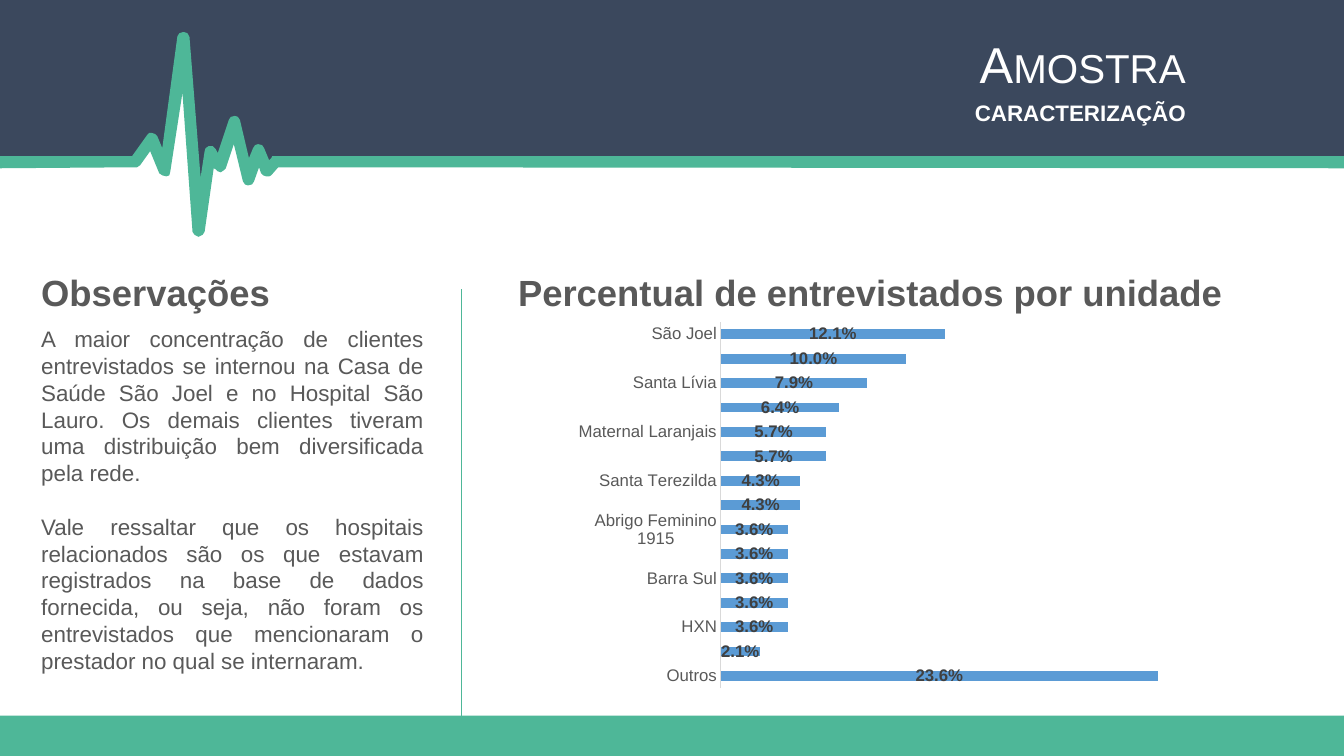
"""Build the sample characterisation slide."""
from lxml import etree
from pptx import Presentation
from pptx import util as u
from pptx.chart.data import CategoryChartData
from pptx.dml.color import RGBColor
from pptx.enum import chart as ec, shapes, text
from pptx.oxml import parse_xml
from pptx.oxml.ns import nsdecls, qn

W, H = 13.33, 7.5
NAVY, GREEN, GREY, WHITE = "3B485D", "4EB798", "595959", "FFFFFF"
BLUE, DARK, PALE = "5B9BD5", "404040", "D9D9D9"

HEADER = [
    (W, 0), (0, 0), (0, 1.61), (1.34, 1.6), (1.52, 1.41), (1.62, 1.67),
    (1.81, 0.74), (1.97, 2.04), (2.08, 1.55), (2.18, 1.65), (2.31, 1.26),
    (2.46, 1.76), (2.58, 1.53), (2.65, 1.69), (2.75, 1.6), (W, 1.61)]
PULSE = [
    (W, 1.55), (2.73, 1.55), (2.7, 1.55), (2.69, 1.57), (2.67, 1.59),
    (2.62, 1.47), (2.6, 1.44), (2.56, 1.43), (2.53, 1.44), (2.51, 1.47),
    (2.47, 1.57), (2.38, 1.19), (2.36, 1.16), (2.33, 1.15), (2.29, 1.16),
    (2.27, 1.19), (2.16, 1.52), (2.14, 1.48), (2.11, 1.45), (2.07, 1.45),
    (2.04, 1.47), (2.03, 1.5), (1.99, 1.76), (1.88, 0.37), (1.86, 0.33),
    (1.83, 0.32), (1.81, 0.32), (1.78, 0.33), (1.76, 0.36), (1.61, 1.47),
    (1.56, 1.35), (1.54, 1.33), (1.51, 1.32), (1.48, 1.32), (1.46, 1.34),
    (1.31, 1.55), (0, 1.55), (0, 1.67), (1.34, 1.66), (1.36, 1.66),
    (1.39, 1.64), (1.49, 1.5), (1.58, 1.72), (1.61, 1.74), (1.65, 1.75),
    (1.68, 1.74), (1.69, 1.7), (1.81, 0.92), (1.91, 2.3), (1.93, 2.33),
    (1.97, 2.35), (2.01, 2.33), (2.03, 2.3), (2.12, 1.67), (2.14, 1.68),
    (2.16, 1.7), (2.19, 1.71), (2.22, 1.69), (2.24, 1.67), (2.32, 1.43),
    (2.41, 1.8), (2.43, 1.83), (2.46, 1.84), (2.5, 1.83), (2.52, 1.8),
    (2.57, 1.66), (2.59, 1.72), (2.61, 1.74), (2.64, 1.75), (2.67, 1.75),
    (2.69, 1.74), (2.76, 1.66), (W, 1.67)]
NOTES = [
    "A maior concentração de clientes entrevistados se internou na Casa de "
    "Saúde São Joel e no Hospital São Lauro. Os demais clientes tiveram uma "
    "distribuição bem diversificada pela rede.",
    "Vale ressaltar que os hospitais relacionados são os que estavam "
    "registrados na base de dados fornecida, ou seja, não foram os "
    "entrevistados que mencionaram o prestador no qual se internaram."]
UNITS = [
    ("São Joel", 0.121), ("São Lauro", 0.1), ("Santa Lívia", 0.079),
    ("São Valério do Sul", 0.064), ("Maternal Laranjais", 0.057),
    ("Costa Sul", 0.057), ("Santa Terezilda", 0.043),
    ("Hospital Itaperi", 0.043), ("Abrigo Feminino 1915", 0.036),
    ("Day Hospital", 0.036), ("Barra Sul", 0.036), ("Rio Sol", 0.036),
    ("HXN", 0.036), ("Dr Balduíno", 0.021), ("Outros", 0.236)]
LEFT, HEAD, BODY, FOOT = 0.31, 2.63, 3.18, 7.1


def rgb(code):
    """Turn a hex string into a colour."""
    return RGBColor.from_string(code)


def style(font, size, color, bold=False):
    """Set size, colour and weight of a font."""
    font.name, font.size, font.bold = "Arial", u.Pt(size), bold
    font.color.rgb = rgb(color)


def paint(shape, color):
    """Give a shape a plain fill."""
    shape.shadow.inherit = False
    shape.fill.solid()
    shape.fill.fore_color.rgb = rgb(color)
    shape.line.fill.background()


def trace(slide, points, color):
    """Draw a closed filled outline on a grid of hundredths of an inch."""
    grid = [(round(x * 100), round(y * 100)) for x, y in points]
    pen = slide.shapes.build_freeform(*grid[0], scale=u.Inches(0.01))
    pen.add_line_segments(grid[1:], close=True)
    paint(pen.convert_to_shape(), color)


def write(slide, box, lines, color, align=text.PP_ALIGN.LEFT):
    """Add a text box of (text, size, bold) lines and return its paragraphs."""
    frame = slide.shapes.add_textbox(*map(u.Inches, box)).text_frame
    frame.word_wrap = True
    frame.text = "\n".join(line[0] for line in lines)
    for par, (_, size, bold) in zip(frame.paragraphs, lines):
        par.alignment = align
        style(par.font, size, color, bold)
    return frame.paragraphs


def plot(slide, box):
    """Add the bar chart of units."""
    data = CategoryChartData(number_format="0.0%")
    data.categories = [name for name, _ in UNITS]
    data.add_series("Series 1", [share for _, share in UNITS])
    kind = ec.XL_CHART_TYPE.BAR_STACKED
    chart = slide.shapes.add_chart(kind, *map(u.Inches, box), data).chart
    chart.has_legend = chart.has_title = False
    style(chart.font, 12, GREY)
    cat, val = chart.category_axis, chart.value_axis
    cat.reverse_order = True
    cat.major_tick_mark = cat.minor_tick_mark = ec.XL_TICK_MARK.NONE
    cat.format.line.color.rgb = rgb(PALE)
    cat.format.line.width = u.Pt(0.75)
    style(cat.tick_labels.font, 12, GREY)
    val.minimum_scale, val.maximum_scale = 0, 0.25
    val.has_major_gridlines = val.visible = False
    bars = chart.plots[0]
    bars.gap_width, bars.overlap, bars.vary_by_categories = 150, 100, False
    fill = bars.series[0].format.fill
    fill.solid()
    fill.fore_color.rgb = rgb(BLUE)
    tags = bars.series[0].data_labels
    tags.show_value = True
    tags.number_format, tags.number_format_is_linked = "0.0%", False
    tags.position = ec.XL_LABEL_POSITION.CENTER
    style(tags.font, 12, DARK, True)
    area = chart._chartSpace.chart.plotArea
    for old in area.findall(qn("c:layout")):
        area.remove(old)
    rules = [("layoutTarget", "inner"), ("xMode", "edge"), ("yMode", "edge"),
             ("x", 0.248), ("y", 0.004), ("w", 0.73), ("h", 0.956)]
    inner = "".join(f'<c:{tag} val="{val}"/>' for tag, val in rules)
    area.insert(0, parse_xml(
        f'<c:layout {nsdecls("c")}><c:manualLayout>{inner}'
        "</c:manualLayout></c:layout>"))


def main():
    """Build and save the slide."""
    deck = Presentation()
    deck.slide_width, deck.slide_height = u.Inches(W), u.Inches(H)
    slide = deck.slides.add_slide(deck.slide_layouts[6])
    trace(slide, HEADER, NAVY)
    trace(slide, PULSE, GREEN)
    foot = slide.shapes.add_shape(
        shapes.MSO_SHAPE.RECTANGLE, *map(u.Inches, (0, FOOT, W, H - FOOT)))
    paint(foot, GREEN)
    title = [("Amostra", 36, False), ("caracterização", 20, True)]
    for par in write(slide, (2.46, 0.28, 9.4, 1.04), title, WHITE,
                     text.PP_ALIGN.RIGHT):
        par.runs[0]._r.get_or_add_rPr().set("cap", "small")
    notes = write(slide, (LEFT, BODY, 3.99, 3.06),
                  [(note, 16, False) for note in NOTES], GREY,
                  text.PP_ALIGN.JUSTIFY)
    for par in notes:
        par.line_spacing = u.Pt(19.15)
    notes[1].space_before = u.Pt(19.15)
    rule = slide.shapes.add_connector(
        shapes.MSO_CONNECTOR.STRAIGHT,
        *map(u.Inches, (4.58, 2.87, 4.58, 7.13)))
    rule.line.width = u.Pt(1)
    rule.line.color.rgb = rgb(GREEN)
    etree.SubElement(rule._element.spPr, qn("a:effectLst"))
    for left, wide, head in [
            (LEFT, 4.19, "Observações"),
            (5.04, 7.39, "Percentual de entrevistados por unidade")]:
        write(slide, (left, HEAD, wide, 0.54), [(head, 26, True)], GREY)
    plot(slide, (5.59, BODY, 6.29, 3.8))
    deck.save("out.pptx")


if __name__ == "__main__":
    main()
